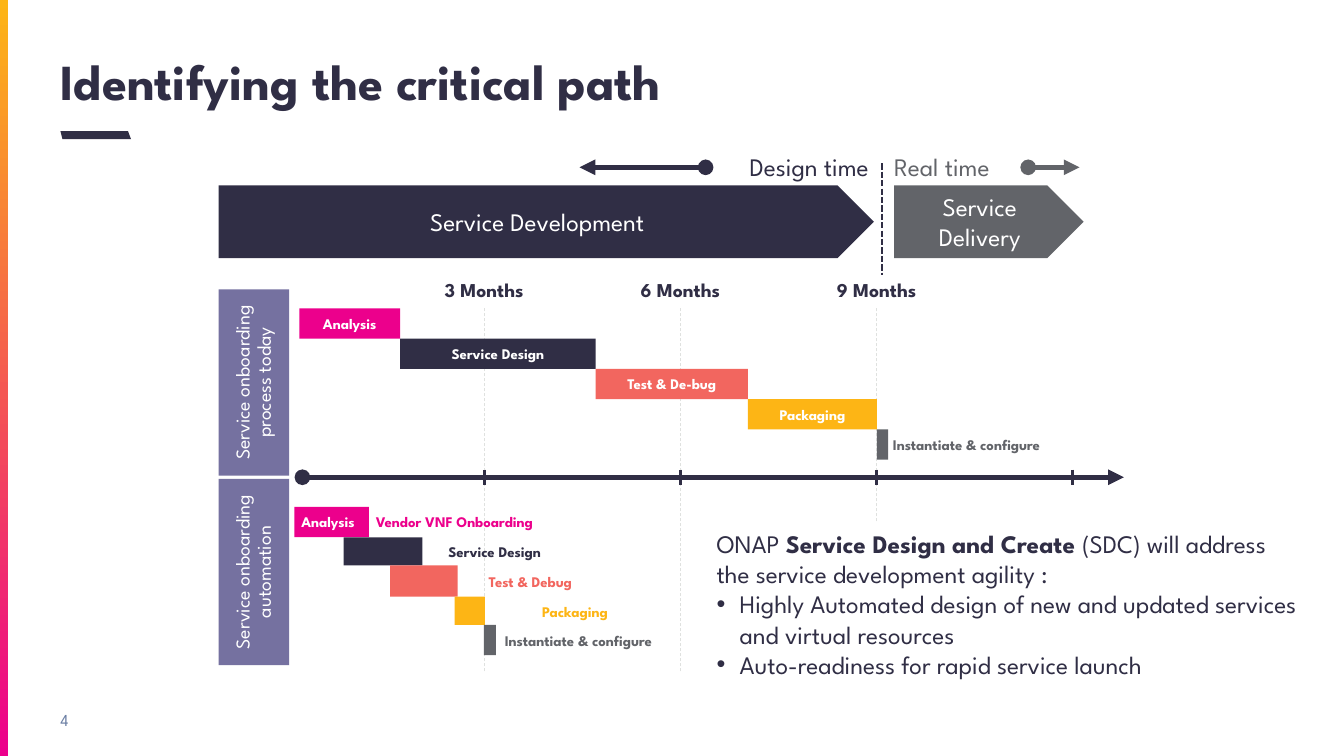
"""Build the critical path slide on a grid of tenth-of-an-inch columns and rows."""
from dataclasses import dataclass
from itertools import accumulate
from typing import Optional

from lxml.etree import SubElement
from pptx import Presentation
from pptx.dml.color import RGBColor
from pptx.enum.dml import MSO_LINE
from pptx.enum.shapes import MSO_CONNECTOR, MSO_SHAPE
from pptx.enum.text import MSO_ANCHOR, MSO_AUTO_SIZE, PP_ALIGN
from pptx.oxml.ns import qn
from pptx.util import Inches, Pt

FONT = "League Spartan"
NAVY = RGBColor(0x30, 0x2E, 0x45)
PINK = RGBColor(0xEC, 0x00, 0x8C)
CORAL = RGBColor(0xF2, 0x66, 0x5F)
AMBER = RGBColor(0xFD, 0xB5, 0x15)
GRAY = RGBColor(0x62, 0x64, 0x69)
PURPLE = RGBColor(0x75, 0x71, 0xA0)
STEEL = RGBColor(0x6C, 0x80, 0xA5)
PALE = RGBColor(0xDF, 0xE1, 0xDF)
WHITE = RGBColor(0xFF, 0xFF, 0xFF)

COLUMNS, ROWS = 133.33, 75
QUARTER_START, QUARTER_STEP = 48.03, 19.47
QUARTERS = [QUARTER_START + QUARTER_STEP * index for index in range(4)]
AXIS_ROW, ARROW_ROW = 47.35, 16.6
BAR_HEIGHT = 3
DEFAULT_MARGINS = (1, 0.5, 1, 0.5)
NO_MARGINS = (0, 0, 0, 0)


@dataclass(frozen=True)
class Box:
    left: float
    top: float
    width: float
    height: float


@dataclass(frozen=True)
class Words:
    text: str
    size: float
    color: RGBColor
    bold: bool = False
    align: PP_ALIGN = PP_ALIGN.LEFT
    anchor: MSO_ANCHOR = MSO_ANCHOR.TOP
    margins: tuple = DEFAULT_MARGINS
    wrap: bool = False
    spacing: Optional[float] = None


@dataclass(frozen=True)
class Line:
    start: tuple
    end: tuple
    color: RGBColor
    width: float
    dash: Optional[MSO_LINE] = None
    arrow: bool = False


@dataclass(frozen=True)
class Bar:
    left: float
    width: float
    height: float
    color: RGBColor


def grid(units: float) -> int:
    return Inches(round(units / 10, 3))


def place(box: Box) -> tuple:
    return grid(box.left), grid(box.top), grid(box.width), grid(box.height)


def write(shape, words: Words) -> None:
    frame = shape.text_frame
    frame.text = words.text
    frame.word_wrap = words.wrap
    frame.vertical_anchor = words.anchor
    frame.margin_left, frame.margin_top, frame.margin_right, frame.margin_bottom = map(grid, words.margins)
    for paragraph in frame.paragraphs:
        paragraph.alignment = words.align
        if words.spacing:
            paragraph.line_spacing = words.spacing
        for run in paragraph.runs:
            style(run, words.size, words.color, words.bold)


def style(run, size: float, color: RGBColor, bold: bool) -> None:
    run.font.name = FONT
    run.font.size = Pt(size)
    run.font.bold = bold
    run.font.color.rgb = color


def add_block(slide, box: Box, color: RGBColor, words: Optional[Words] = None, kind=MSO_SHAPE.RECTANGLE):
    shape = slide.shapes.add_shape(kind, *place(box))
    shape.shadow.inherit = False
    shape.fill.solid()
    shape.fill.fore_color.rgb = color
    shape.line.fill.background()
    if words:
        write(shape, words)
    return shape


def add_text(slide, box: Box, words: Words) -> None:
    shape = slide.shapes.add_textbox(*place(box))
    write(shape, words)
    shape.text_frame.auto_size = MSO_AUTO_SIZE.SHAPE_TO_FIT_TEXT


def add_line(slide, line: Line) -> None:
    connector = slide.shapes.add_connector(MSO_CONNECTOR.STRAIGHT, *map(grid, line.start + line.end))
    connector.line.color.rgb = line.color
    connector.line.width = Pt(line.width)
    if line.dash:
        connector.line.dash_style = line.dash
    properties = connector._element.spPr
    if line.arrow:
        outline = properties.find(qn("a:ln"))
        SubElement(outline, qn("a:headEnd"), type="oval")
        SubElement(outline, qn("a:tailEnd"), type="triangle")
    SubElement(properties, qn("a:effectLst"))


def add_frame(slide) -> None:
    edge = add_block(slide, Box(0, 0, 0.8, ROWS), AMBER)
    edge.fill.gradient()
    edge.fill.gradient_angle = 270
    for stop, color in zip(edge.fill.gradient_stops, (AMBER, PINK)):
        stop.color.rgb = color
    builder = slide.shapes.build_freeform(grid(6), grid(13))
    builder.add_line_segments([(grid(x), grid(y)) for x, y in ((12.7, 13), (13, 13.8), (6.2, 13.8))])
    accent = builder.convert_to_shape()
    accent.shadow.inherit = False
    accent.fill.solid()
    accent.fill.fore_color.rgb = NAVY
    accent.line.fill.background()
    add_text(slide, Box(6, 4.9, 121.3, 6.1), Words(
        "Identifying the critical path", 36, NAVY, True, anchor=MSO_ANCHOR.BOTTOM, margins=NO_MARGINS, wrap=True))
    add_text(slide, Box(6, 69.4, 6.9, 4), Words(
        "4", 12, STEEL, anchor=MSO_ANCHOR.MIDDLE, margins=(0, 0.5, 1, 0.5), wrap=True))


def add_timeline(slide) -> None:
    for column in QUARTERS[:3]:
        add_line(slide, Line((column, 66.6), (column, 30.5), PALE, 0.5, MSO_LINE.DASH))
    add_line(slide, Line((30, AXIS_ROW), (111.5, AXIS_ROW), NAVY, 3.75, arrow=True))
    for column in QUARTERS:
        add_line(slide, Line((column, AXIS_ROW - 0.75), (column, AXIS_ROW + 0.75), NAVY, 2.25))
    for number, column in enumerate(QUARTERS[:3], 1):
        add_text(slide, Box(column - 5, 27.1, 10, 3.1), Words(
            f"{3 * number} Months", 14, NAVY, True, PP_ALIGN.CENTER))


def add_phases(slide) -> None:
    add_line(slide, Line((87.5, 16.2), (87.5, 27.3), NAVY, 1.5, MSO_LINE.SQUARE_DOT))
    for text, left, width, color in (("Service Development", 21.7, 65, NAVY), ("Service Delivery", 88.7, 18.8, GRAY)):
        add_block(slide, Box(left, 18.4, width, 7.2), color, Words(
            text, 18, WHITE, align=PP_ALIGN.CENTER, anchor=MSO_ANCHOR.MIDDLE, margins=(1, 0, 1, 0), wrap=True),
            MSO_SHAPE.PENTAGON)
    add_text(slide, Box(88.7, 14.5, 11.5, 4), Words(
        "Real time", 18, GRAY, anchor=MSO_ANCHOR.MIDDLE, margins=(0, 0.5, 0, 0.5)))
    add_text(slide, Box(71.8, 14.5, 16.6, 4), Words(
        "Design time", 18, NAVY, align=PP_ALIGN.RIGHT, anchor=MSO_ANCHOR.MIDDLE, margins=(0, 0.5, 2.2, 0.5)))
    for start, end, color in ((102, 107.1, GRAY), (70, 57.5, NAVY)):
        add_line(slide, Line((start, ARROW_ROW), (end, ARROW_ROW), color, 3.75, arrow=True))


def add_processes(slide) -> None:
    for top, text in ((28.7, "process today"), (47.5, "automation")):
        header = add_block(slide, Box(21.7, top, 7, 18.5), PURPLE, Words(
            f"Service onboarding\n{text}", 14, WHITE, align=PP_ALIGN.CENTER, anchor=MSO_ANCHOR.MIDDLE,
            margins=NO_MARGINS, wrap=True, spacing=0.9))
        header.text_frame._txBody.bodyPr.set("vert", "vert270")
    today = (("Analysis", 10, PINK), ("Service Design", 19.4, NAVY), ("Test & De-bug", 15.1, CORAL),
             ("Packaging", 12.8, AMBER), ("", 1.1, GRAY))
    lefts = accumulate((width for _, width, _ in today), initial=29.7)
    for row, (left, (text, width, color)) in enumerate(zip(lefts, today)):
        add_block(slide, Box(left, 30.6 + BAR_HEIGHT * row, width, BAR_HEIGHT), color, Words(
            text, 10.5, WHITE, True, PP_ALIGN.CENTER, MSO_ANCHOR.MIDDLE, wrap=True) if text else None)
    automated = (Bar(29.2, 7.4, 3, PINK), Bar(34.1, 7.8, 2.8, NAVY), Bar(38.7, 6.7, 3.1, CORAL),
                 Bar(45.1, 3, 2.8, AMBER), Bar(48, 1.2, 3, GRAY))
    tops = accumulate((bar.height for bar in automated), initial=50.3)
    for top, bar in zip(tops, automated):
        add_block(slide, Box(bar.left, top, bar.width, bar.height), bar.color)
    labels = (("Instantiate & configure", 87.6, 42.7, 18, GRAY), ("Analysis", 28.9, 50.4, 8.1, WHITE),
              ("Vendor VNF Onboarding", 36.3, 50.4, 19.6, PINK), ("Service Design", 43.5, 53.4, 12.6, NAVY),
              ("Test & Debug", 47.5, 56.3, 11.5, CORAL), ("Packaging", 52.8, 59.3, 9.7, AMBER),
              ("Instantiate & configure", 49.1, 62.2, 18, GRAY))
    for text, left, top, width, color in labels:
        add_text(slide, Box(left, top, width, 2.8), Words(text, 10.5, color, True))


def add_summary(slide) -> None:
    bullets = ("Highly Automated design of new and updated services and virtual resources",
               "Auto-readiness for rapid service launch")
    shape = add_block(slide, Box(70.1, 51.9, 59.9, 16.2), WHITE, Words(
        "\n".join(("ONAP ", *bullets)), 18, NAVY, wrap=True))
    opening, *items = shape.text_frame.paragraphs
    for text, bold in (("Service Design and Create ", True),
                       ("(SDC) will address the service development agility :", False)):
        run = opening.add_run()
        run.text = text
        style(run, 18, NAVY, bold)
    for paragraph in items:
        properties = paragraph._p.get_or_add_pPr()
        properties.set("marL", str(grid(2.3)))
        properties.set("indent", str(-grid(2.3)))
        SubElement(properties, qn("a:buFont"), typeface="Arial")
        SubElement(properties, qn("a:buChar"), char="•")


def main() -> None:
    presentation = Presentation()
    presentation.slide_width, presentation.slide_height = grid(COLUMNS), grid(ROWS)
    slide = presentation.slides.add_slide(presentation.slide_layouts[6])
    for add_part in (add_frame, add_timeline, add_phases, add_processes, add_summary):
        add_part(slide)
    presentation.save("out.pptx")


if __name__ == "__main__":
    main()
